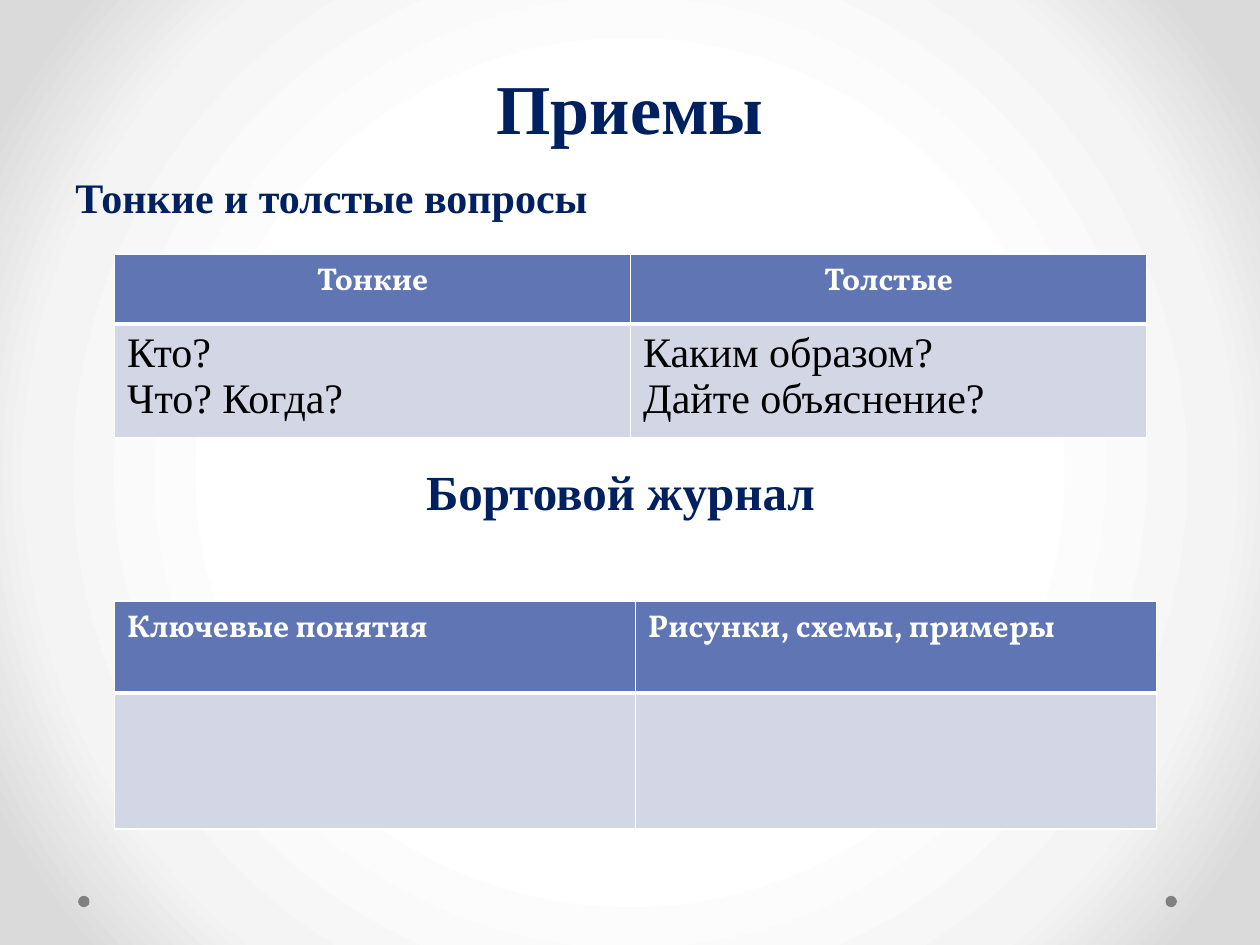
from dataclasses import dataclass

from lxml import etree
from pptx import Presentation
from pptx.dml.color import RGBColor
from pptx.enum.shapes import MSO_SHAPE
from pptx.enum.text import MSO_ANCHOR, PP_ALIGN
from pptx.oxml import parse_xml
from pptx.oxml.ns import nsdecls, qn
from pptx.util import Inches, Pt

OVAL = MSO_SHAPE.OVAL
TOP, BOTTOM = MSO_ANCHOR.TOP, MSO_ANCHOR.BOTTOM
LEFT, CENTER = PP_ALIGN.LEFT, PP_ALIGN.CENTER
SERIF, HEADER_FONT = "Times New Roman", "Vollkorn"
NAVY, WHITE, BLACK = "002060", "FFFFFF", "000000"
HEADER_FILL, BODY_FILL, DOT_FILL = "6076B4", "D2D6E5", "808080"
BACKDROP_STOPS = ((50, WHITE), (76, "F4F4F4"), (92, "DADADA"))


@dataclass
class Heading:
    text: str
    left: float
    top: float
    width: float
    height: float
    size: int
    align: PP_ALIGN = CENTER
    anchor: MSO_ANCHOR = TOP
    space_before: float = 0
    line_points: float | None = None


@dataclass
class Grid:
    top: float
    width: float
    row_heights: tuple[float, float]
    rows: tuple[tuple[str, str], tuple[str, str]]
    header_align: PP_ALIGN


TITLE = Heading("Приемы", 0.5, 0.36, 9, 0.87, 40, anchor=BOTTOM, line_points=58)
JOURNAL = Heading("Бортовой журнал", 0.91, 3.61, 8.03, 1.19, 28, space_before=4)
QUESTIONS = Heading("Тонкие и толстые вопросы", 0.5, 1.31, 8.67, 1.97, 24,
                    align=LEFT, space_before=4.8)
JOURNAL_GRID = Grid(4.77, 8.27, (0.73, 1.08),
                    (("Ключевые понятия", "Рисунки, схемы, примеры"), ("", "")), LEFT)
QUESTION_GRID = Grid(2.02, 8.19, (0.55, 0.84),
                     (("Тонкие", "Толстые"),
                      ("Кто?\nЧто? Когда?", "Каким образом?\nДайте объяснение?")), CENTER)


def color(value: str) -> RGBColor:
    """Turn a hex string into a colour."""
    return RGBColor.from_string(value)


def style(paragraph, name: str, size: float, ink: str, bold: bool) -> None:
    """Set the font of a whole paragraph."""
    font = paragraph.font
    font.name, font.size, font.bold = name, Pt(size), bold
    font.color.rgb = color(ink)


def paint_background(page) -> None:
    """Fill the page with a circular gradient."""
    stops = "".join(f'<a:gs pos="{position * 1000}"><a:srgbClr val="{value}"/></a:gs>'
                    for position, value in BACKDROP_STOPS)
    page.background.fill.solid()
    properties = page.element.find(f".//{qn('p:bgPr')}")
    gradient = parse_xml(
        f'<a:gradFill {nsdecls("a")} rotWithShape="1"><a:gsLst>{stops}</a:gsLst>'
        '<a:path path="circle"><a:fillToRect l="50000" t="50000" r="50000" b="50000"/>'
        '</a:path></a:gradFill>')
    properties.replace(properties.find(qn("a:solidFill")), gradient)


def add_dot(page, left: float) -> None:
    """Draw a small footer dot."""
    dot = page.shapes.add_shape(OVAL, Inches(left), Inches(7.11), Inches(0.09), Inches(0.09))
    dot.shadow.inherit = False
    dot.fill.solid()
    dot.fill.fore_color.rgb = color(DOT_FILL)
    dot.line.fill.background()


def add_heading(page, heading: Heading) -> None:
    """Add a bold navy heading."""
    box = page.shapes.add_textbox(Inches(heading.left), Inches(heading.top),
                                  Inches(heading.width), Inches(heading.height))
    frame = box.text_frame
    frame.word_wrap = True
    frame.vertical_anchor = heading.anchor
    paragraph = frame.paragraphs[0]
    paragraph.text = heading.text
    paragraph.alignment = heading.align
    paragraph.space_before = Pt(heading.space_before)
    if heading.line_points:
        paragraph.line_spacing = Pt(heading.line_points)
    style(paragraph, SERIF, heading.size, NAVY, True)


def add_borders(cell, top: float, bottom: float) -> None:
    """Give a cell white borders with the given top and bottom widths."""
    properties = cell._tc.get_or_add_tcPr()
    for side, width in (("L", 1), ("R", 1), ("T", top), ("B", bottom)):
        line = etree.SubElement(properties, qn(f"a:ln{side}"), w=str(Pt(width)))
        fill = etree.SubElement(line, qn("a:solidFill"))
        etree.SubElement(fill, qn("a:srgbClr"), val=WHITE)


def add_grid(page, grid: Grid) -> None:
    """Add a two-column table with a header row."""
    frame = page.shapes.add_table(2, 2, Inches(0.91), Inches(grid.top),
                                  Inches(grid.width), Inches(sum(grid.row_heights)))
    table = frame.table
    for row_index, (height, texts) in enumerate(zip(grid.row_heights, grid.rows)):
        header = row_index == 0
        table.rows[row_index].height = Inches(height)
        for column_index, text in enumerate(texts):
            cell = table.cell(row_index, column_index)
            cell.text = text
            add_borders(cell, *((1, 3) if header else (3, 1)))
            cell.fill.solid()
            cell.fill.fore_color.rgb = color(HEADER_FILL if header else BODY_FILL)
            for paragraph in cell.text_frame.paragraphs:
                if header:
                    paragraph.alignment = grid.header_align
                    style(paragraph, HEADER_FONT, 18, WHITE, True)
                else:
                    style(paragraph, SERIF, 24, BLACK, False)


def main() -> None:
    """Build and save the deck."""
    deck = Presentation()
    deck.slide_width, deck.slide_height = Inches(10), Inches(7.5)
    page = deck.slides.add_slide(deck.slide_layouts[6])
    paint_background(page)
    for left in (9.25, 0.62):
        add_dot(page, left)
    add_heading(page, TITLE)
    add_heading(page, JOURNAL)
    add_grid(page, JOURNAL_GRID)
    add_heading(page, QUESTIONS)
    add_grid(page, QUESTION_GRID)
    deck.save("out.pptx")


if __name__ == "__main__":
    main()
